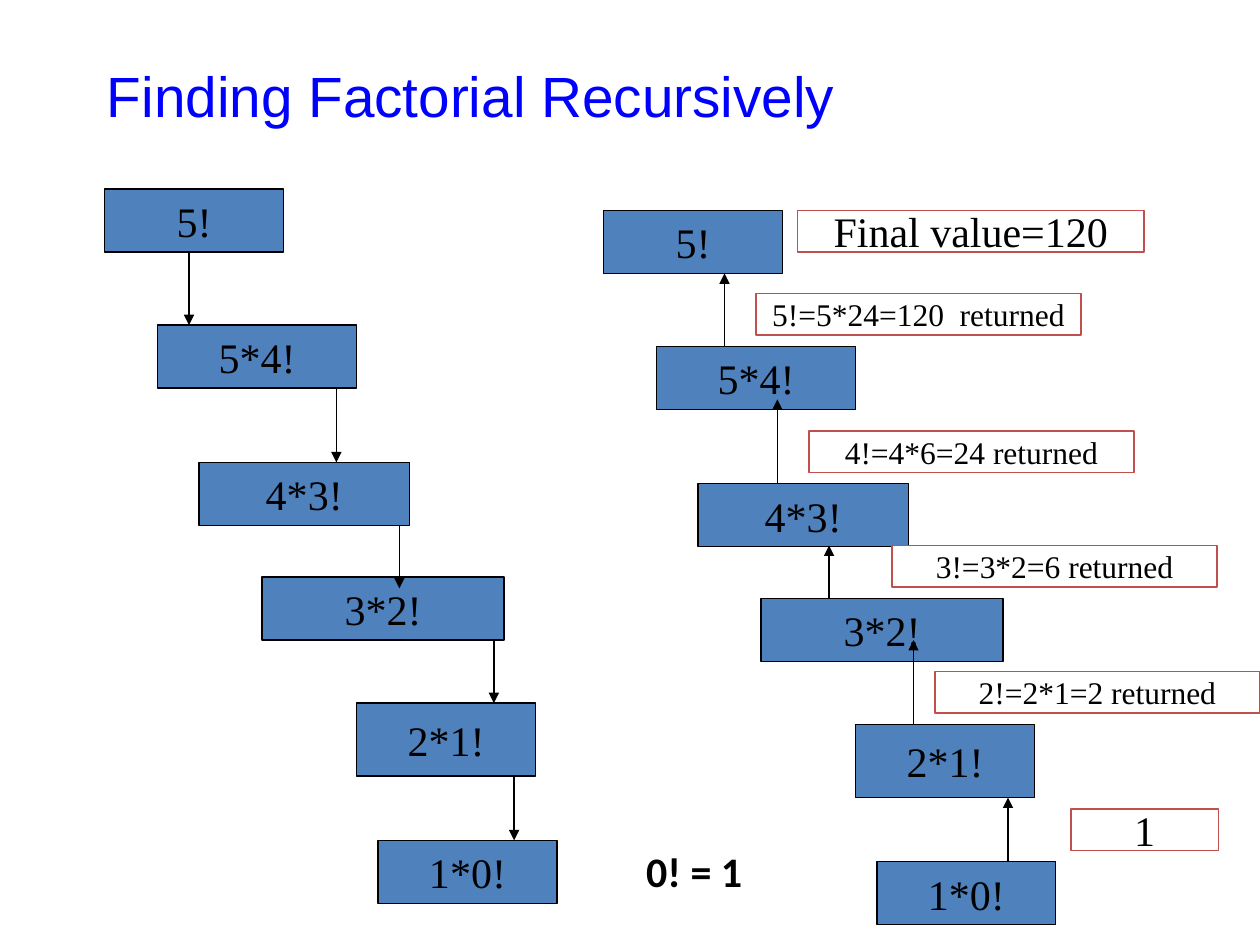
"""Build a slide tracing the recursive evaluation of 5 factorial."""
import pptx
import pptx.dml.color
import pptx.enum.shapes
import pptx.enum.text
import pptx.oxml.ns
import pptx.util
from lxml import etree
from pptx.util import Inches

BLACK = pptx.dml.color.RGBColor(0x00, 0x00, 0x00)
WHITE = pptx.dml.color.RGBColor(0xFF, 0xFF, 0xFF)
TITLE_BLUE = pptx.dml.color.RGBColor(0x00, 0x00, 0xFF)
CALL_BLUE = pptx.dml.color.RGBColor(0x4F, 0x81, 0xBD)
RESULT_RED = pptx.dml.color.RGBColor(0xC0, 0x50, 0x4D)
LINE_WIDTH = pptx.util.Pt(0.75)

CALLS = [
    ("5!", 0.83, 1.5, 1.42, 0.5),
    ("5*4!", 1.25, 2.58, 1.58, 0.5),
    ("4*3!", 1.58, 3.67, 1.67, 0.5),
    ("3*2!", 2.08, 4.58, 1.92, 0.5),
    ("2*1!", 2.83, 5.58, 1.42, 0.58),
    ("1*0!", 3, 6.67, 1.42, 0.5),
]
RETURN_SHIFT = (3.96, 0.17)
CALL_ARROWS = [
    (1.5, 2, 2.58),
    (2.67, 3.08, 3.67),
    (3.17, 4.17, 4.67),
    (3.92, 5.08, 5.58),
    (4.08, 6.17, 6.67),
]
RETURN_ARROWS = [
    (8, 6.83, 6.33),
    (7.25, 5.75, 5.08),
    (6.58, 4.75, 4.33),
    (6.17, 3.83, 3.17),
    (5.75, 2.75, 2.17),
]
RESULTS = [
    ("Final value=120", 6.33, 1.67, 2.75, 24),
    ("5!=5*24=120  returned", 6, 2.33, 2.58, 18),
    ("4!=4*6=24 returned", 6.42, 3.42, 2.58, 18),
    ("3!=3*2=6 returned", 7.08, 4.33, 2.58, 18),
    ("2!=2*1=2 returned", 7.42, 5.33, 2.58, 18),
    ("1", 8.5, 6.42, 1.17, 24),
]


def write_text(frame, text, font="Times New Roman", size=24, color=BLACK, bold=False,
               align="CENTER", anchor="MIDDLE", wrap=False):
    """Put one formatted paragraph in a text frame."""
    frame.word_wrap = wrap
    frame.vertical_anchor = getattr(pptx.enum.text.MSO_ANCHOR, anchor)
    paragraph = frame.paragraphs[0]
    paragraph.alignment = getattr(pptx.enum.text.PP_ALIGN, align)
    run = paragraph.add_run()
    run.text = text
    run.font.name = font
    run.font.size = pptx.util.Pt(size)
    run.font.bold = bold
    run.font.color.rgb = color


def add_box(slide, text, left, top, width, height, fill, outline, size=24):
    """Add an outlined rectangle with centred text."""
    box = slide.shapes.add_shape(pptx.enum.shapes.MSO_SHAPE.RECTANGLE, Inches(left),
                                 Inches(top), Inches(width), Inches(height))
    box.shadow.inherit = False
    box.fill.solid()
    box.fill.fore_color.rgb = fill
    box.line.color.rgb = outline
    box.line.width = LINE_WIDTH
    write_text(box.text_frame, text, size=size)


def add_arrow(slide, x, start, end):
    """Add a vertical arrow pointing at its end."""
    arrow = slide.shapes.add_connector(pptx.enum.shapes.MSO_CONNECTOR.STRAIGHT, Inches(x),
                                       Inches(start), Inches(x), Inches(end))
    arrow.line.color.rgb = BLACK
    arrow.line.width = LINE_WIDTH
    etree.SubElement(arrow.line._get_or_add_ln(), pptx.oxml.ns.qn("a:tailEnd"), type="triangle")
    etree.SubElement(arrow._element.spPr, pptx.oxml.ns.qn("a:effectLst"))


def add_label(slide, text, left, top, width, height, **text_format):
    """Add a left-aligned text box."""
    label = slide.shapes.add_textbox(Inches(left), Inches(top), Inches(width), Inches(height))
    write_text(label.text_frame, text, align="LEFT", **text_format)


def add_call_stack(slide, shift_x=0, shift_y=0):
    """Add the staircase of calls, moved by the given shift."""
    for text, left, top, width, height in CALLS:
        add_box(slide, text, left + shift_x, top + shift_y, width, height, CALL_BLUE, BLACK)


def main():
    """Build and save the slide."""
    deck = pptx.Presentation()
    deck.slide_width, deck.slide_height = Inches(10), Inches(7.5)
    slide = deck.slides.add_slide(deck.slide_layouts[6])
    add_label(slide, "Finding Factorial Recursively", 0.75, 0.42, 8.5, 0.67,
              font="Arial", size=32.4, color=TITLE_BLUE, wrap=True)
    add_call_stack(slide)
    add_call_stack(slide, *RETURN_SHIFT)
    for x, start, end in CALL_ARROWS + RETURN_ARROWS:
        add_arrow(slide, x, start, end)
    for text, left, top, width, size in RESULTS:
        add_box(slide, text, left, top, width, 0.33, WHITE, RESULT_RED, size)
    add_label(slide, "0! = 1", 5.03, 6.66, 0.97, 0.5, font="Calibri", bold=True, anchor="TOP")
    deck.save("out.pptx")


if __name__ == "__main__":
    main()
